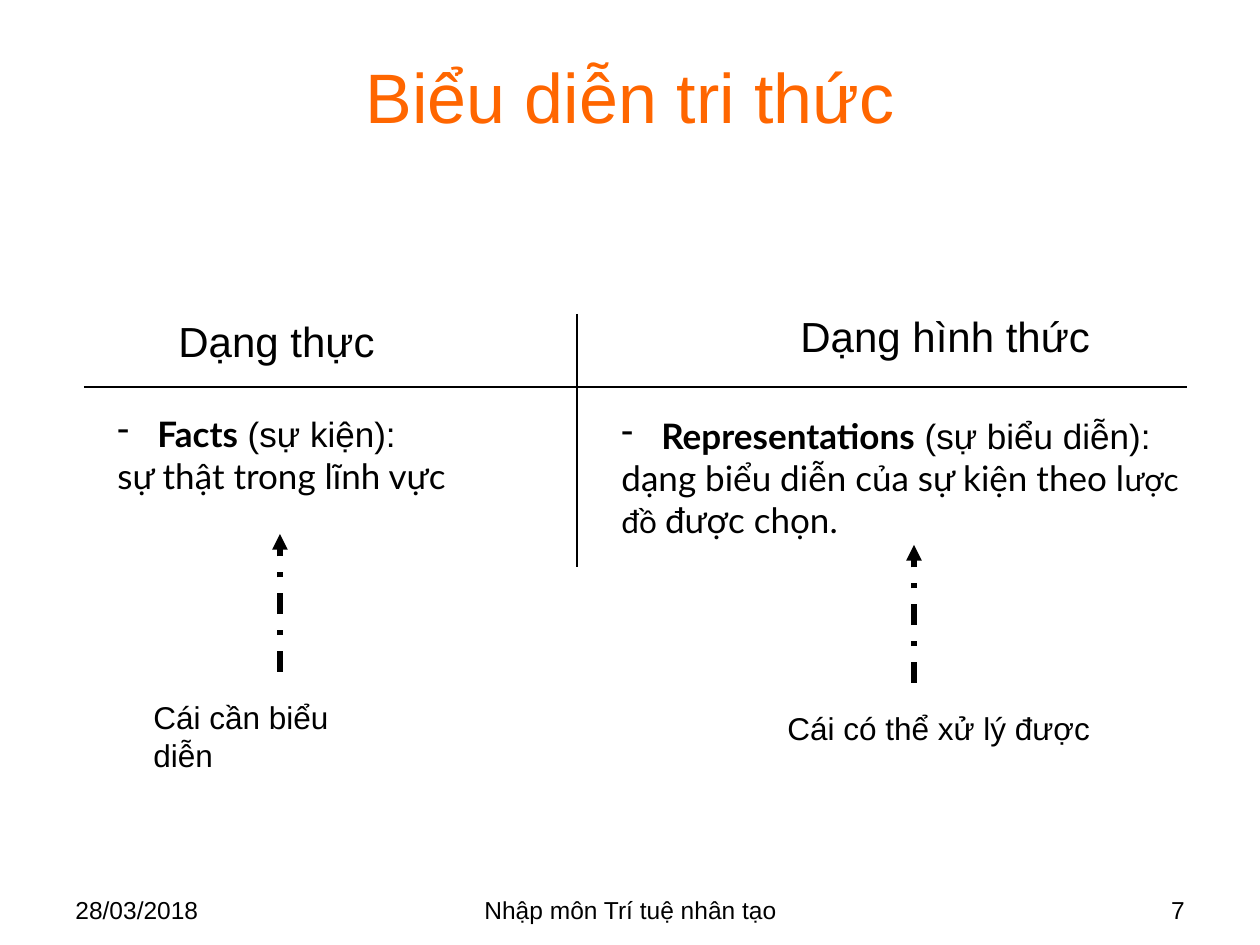
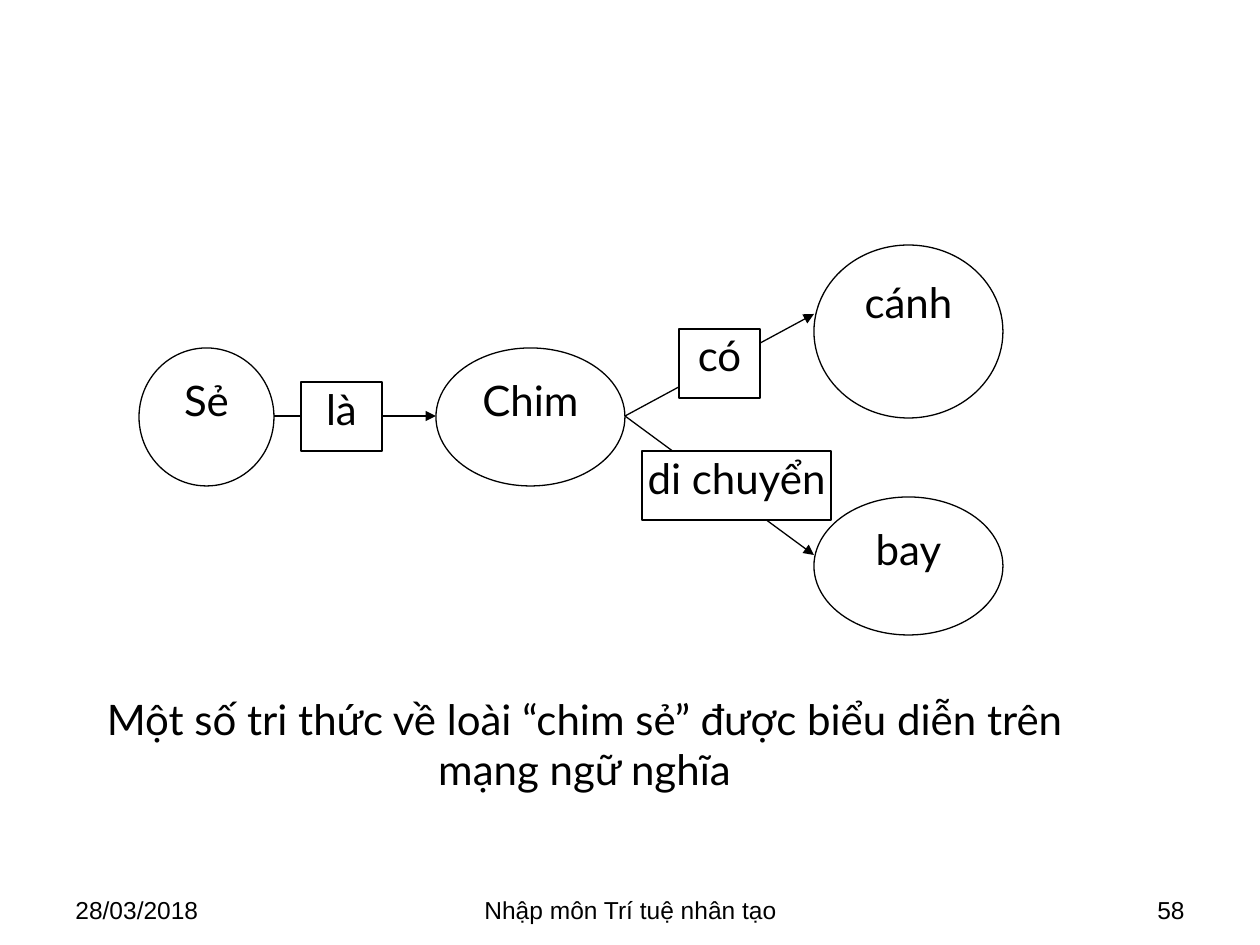
from dataclasses import dataclass

from lxml import etree
from pptx import Presentation
from pptx import util as u
from pptx.dml.color import RGBColor
from pptx.enum import dml, shapes, text
from pptx.oxml import ns

SCALE = 914400 / 126  # EMU per px
LEFT, CENTER, RIGHT = text.PP_ALIGN.LEFT, text.PP_ALIGN.CENTER, text.PP_ALIGN.RIGHT


@dataclass(frozen=True)
class Theme:
    accent: RGBColor = RGBColor(0xFF, 0x66, 0x00)
    ink: RGBColor = RGBColor(0, 0, 0)
    paper: RGBColor = RGBColor(255, 255, 255)
    sans: str = "Arial"
    body: str = "Lato"
    title: int = 40
    large: int = 24
    medium: int = 20
    small: int = 18
    footer: int = 14
    thin: float = 0.75
    thick: float = 3


@dataclass(frozen=True)
class Box:
    left: int
    top: int
    width: int
    height: int

    def inner(self, left, top, width, height):
        return Box(self.left + left, self.top + top, width, height)

    def emu(self):
        return [px(n) for n in (self.left, self.top, self.width, self.height)]


THEME = Theme()


def px(count):
    return u.Emu(round(count * SCALE))


# Text helpers
def write(para, words, size=THEME.large, font=THEME.body, color=THEME.ink,
          bold=False, align=LEFT):
    para.alignment = align
    span = para.add_run()
    span.text = words
    span.font.size = u.Pt(size)
    span.font.name = font
    span.font.color.rgb = color
    span.font.bold = bold


def text_box(page, box, wrap=False):
    frame = page.shapes.add_textbox(*box.emu()).text_frame
    frame.word_wrap = wrap
    return frame


def label(page, box, words, **style):
    write(text_box(page, box).paragraphs[0], words, **style)


def dash_bullet(para, indent):
    props = para._p.get_or_add_pPr()
    props.set("marL", str(px(indent)))
    props.set("indent", str(-px(indent)))
    etree.SubElement(props, ns.qn("a:buChar")).set("char", "-")


# Drawing helpers
def line(page, box, start, end, width=THEME.thin, dash=None, arrow=False):
    """Draw a line between two points given relative to box."""
    points = [px(n) for x, y in (start, end) for n in (box.left + x, box.top + y)]
    connector = page.shapes.add_connector(shapes.MSO_CONNECTOR.STRAIGHT, *points)
    connector.line.color.rgb = THEME.ink
    connector.line.width = u.Pt(width)
    if dash:
        connector.line.dash_style = dash
    if arrow:
        outline = connector.line._get_or_add_ln()
        etree.SubElement(outline, ns.qn("a:tailEnd")).set("type", "triangle")
    etree.SubElement(connector._element.spPr, ns.qn("a:effectLst"))


def text_shape(page, kind, box, words, inset=None, outlined=True):
    shape = page.shapes.add_shape(kind, *box.emu())
    shape.shadow.inherit = False
    shape.fill.solid()
    shape.fill.fore_color.rgb = THEME.paper
    if outlined:
        shape.line.color.rgb = THEME.ink
        shape.line.width = u.Pt(THEME.thin)
    else:
        shape.line.fill.background()
    frame = shape.text_frame
    frame.word_wrap = True
    frame.vertical_anchor = text.MSO_ANCHOR.TOP
    if inset is not None:
        frame.margin_left = frame.margin_right = px(inset)
        frame.margin_top = frame.margin_bottom = px(inset)
    write(frame.paragraphs[0], words, align=CENTER)


# Shared parts
def add_title(page, box, words):
    title = page.shapes.title
    title.left, title.top, title.width, title.height = box.emu()
    title.text_frame.vertical_anchor = text.MSO_ANCHOR.MIDDLE
    write(title.text_frame.paragraphs[0], words, size=THEME.title,
          font=THEME.sans, color=THEME.accent, align=CENTER)


def add_footer(page, box, number):
    parts = [(0, 294, "28/03/2018", LEFT),
             (368, 399, "Nhập môn Trí tuệ nhân tạo", CENTER),
             (840, 294, str(number), RIGHT)]
    for left, width, words, align in parts:
        frame = text_box(page, box.inner(left, 0, width, box.height), wrap=True)
        frame.margin_top = px(34)
        write(frame.paragraphs[0], words, size=THEME.footer, font=THEME.sans,
              align=align)


# Comparison slide
def add_cross(page, box):
    line(page, box, (0, 73), (box.width, 73))
    line(page, box, (493, 0), (493, box.height))


def add_definition(page, box, term, gloss, meaning, wrap=False):
    frame = text_box(page, box, wrap)
    head = frame.paragraphs[0]
    dash_bullet(head, 40)
    write(head, term, size=THEME.medium, bold=True)
    write(head, gloss, size=THEME.medium, font=THEME.sans)
    detail = frame.add_paragraph()
    for words, size in meaning:
        write(detail, words, size=size)


def add_remark(page, box, words):
    line(page, box, (139, 138), (139, 0), width=THEME.thick,
         dash=dml.MSO_LINE.DASH_DOT, arrow=True)
    label(page, box.inner(0, 158, box.width, 50), words,
          size=THEME.small, font=THEME.sans)


def comparison_slide(page):
    add_title(page, Box(63, 16, 1134, 158), "Biểu diễn tri thức")
    add_cross(page, Box(84, 314, 1103, 253))
    label(page, Box(166, 309, 222, 63), "Dạng thực", font=THEME.sans)
    label(page, Box(788, 304, 315, 63), "Dạng hình thức", font=THEME.sans)
    add_definition(page, Box(105, 406, 367, 97), "Facts", " (sự kiện):",
                   [("sự thật trong lĩnh vực", THEME.medium)])
    add_definition(page, Box(609, 408, 609, 139), "Representations",
                   " (sự biểu diễn):",
                   [("dạng biểu diễn của sự kiện theo l", THEME.medium),
                    ("ược đồ ", THEME.small),
                    ("được chọn.", THEME.medium)], wrap=True)
    add_remark(page, Box(141, 534, 268, 208), "Cái cần biểu diễn")
    add_remark(page, Box(775, 545, 328, 208), "Cái có thể xử lý được")


# Semantic network slide
def add_network(page, box):
    links = [((230, 171), (392, 171)),
             ((581, 171), (770, 69)),
             ((581, 171), (770, 310))]
    nodes = [("Sẻ", 95, 103, 135, 138),
             ("Chim", 392, 103, 189, 138),
             ("cánh", 770, 0, 189, 173),
             ("bay", 770, 252, 189, 138)]
    relations = [("là", 257, 137, 81),
                 ("có", 635, 84, 81),
                 ("di chuyển", 598, 206, 189)]
    for start, end in links:
        line(page, box, start, end, arrow=True)
    for words, *place in nodes:
        text_shape(page, shapes.MSO_SHAPE.OVAL, box.inner(*place), words)
    for words, left, top, width in relations:
        text_shape(page, shapes.MSO_SHAPE.RECTANGLE,
                   box.inner(left, top, width, 69), words, inset=1)
    text_shape(page, shapes.MSO_SHAPE.RECTANGLE, box.inner(0, 442, box.width, 103),
               "Một số tri thức về loài “chim sẻ” được biểu diễn trên mạng ngữ nghĩa",
               outlined=False)


def network_slide(page):
    add_network(page, Box(44, 245, 1081, 545))


def main():
    deck = Presentation()
    deck.slide_width, deck.slide_height = px(1260), px(945)
    # Layout 5 holds a title only, layout 6 is blank
    for layout, number, build in [(5, 7, comparison_slide), (6, 58, network_slide)]:
        page = deck.slides.add_slide(deck.slide_layouts[layout])
        add_footer(page, Box(63, 861, 1134, 66), number)
        build(page)
    deck.save("out.pptx")


if __name__ == "__main__":
    main()
